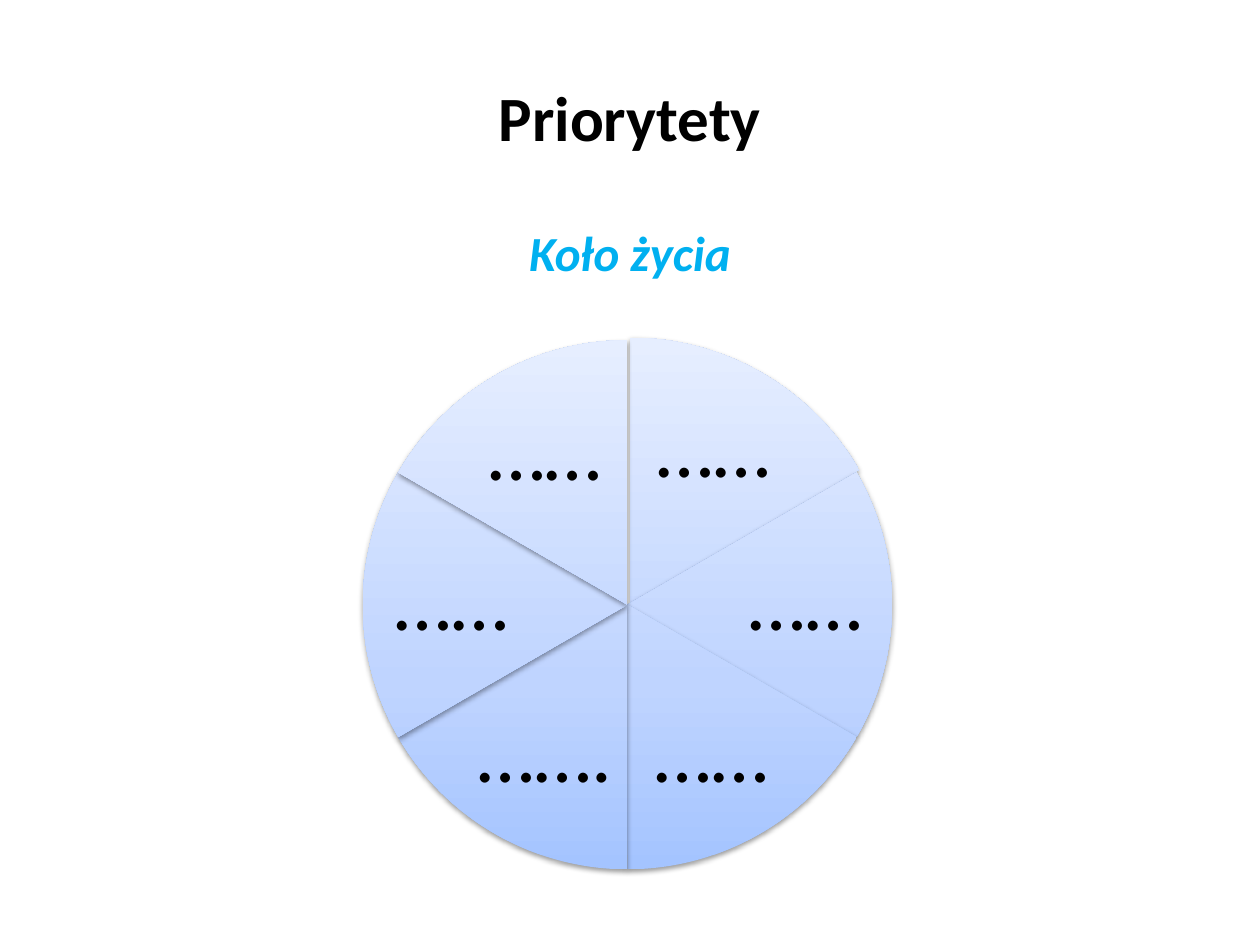
from copy import deepcopy
from dataclasses import dataclass

from pptx import Presentation
from pptx.dml.color import RGBColor
from pptx.enum.shapes import MSO_SHAPE
from pptx.enum.text import MSO_ANCHOR, PP_ALIGN
from pptx.oxml import parse_xml
from pptx.oxml.ns import nsdecls
from pptx.util import Inches, Pt

PIE = MSO_SHAPE.PIE
CENTER = PP_ALIGN.CENTER
TOP, MIDDLE = MSO_ANCHOR.TOP, MSO_ANCHOR.MIDDLE


@dataclass(frozen=True)
class Theme:
    font: str = "Calibri"
    text: str = "000000"
    accent: str = "00B0F0"
    gradient: tuple = ((0, "A4C4FF"), (0.35, "BFD4FF"), (1, "E6EEFF"))
    title_size: float = 36
    subtitle_size: float = 28
    label_size: float = 47


THEME = Theme()

WHEEL_SIZE = 4.2
SECTOR_ANGLE = 60
FIRST_ANGLE = 270  # twelve o'clock, going clockwise
WHEEL_AT = (2.88, 2.7)
FIRST_SECTOR_AT = (2.9, 2.68)

# Clockwise from the top right sector: text and box
LABELS = [
    ("……", (5.05, 3.13, 1.23, 0.9)),
    ("……", (5.76, 4.37, 1.27, 0.85)),
    ("……", (5.03, 5.55, 1.23, 0.9)),
    ("…….", (3.71, 5.55, 1.23, 0.9)),
    ("……", (2.95, 4.37, 1.27, 0.85)),
    ("……", (3.71, 3.15, 1.23, 0.9)),
]


def set_attributes(target, values):
    for name, value in values.items():
        setattr(target, name, value)


def add_text(s, text, box, size, color=THEME.text, anchor=MIDDLE,
             margin=None, paragraph=None, **font):
    tf = s.shapes.add_textbox(*map(Inches, box)).text_frame
    set_attributes(tf, {"word_wrap": True, "vertical_anchor": anchor})
    if margin is not None:
        sides = ("left", "top", "right", "bottom")
        set_attributes(tf, {f"margin_{side}": Inches(margin) for side in sides})
    p = tf.paragraphs[0]
    set_attributes(p, {"alignment": CENTER, **(paragraph or {})})
    r = p.add_run()
    r.text = text
    set_attributes(r.font, {"name": THEME.font, "size": Pt(size), **font})
    r.font.color.rgb = RGBColor.from_string(color)


def fill_gradient(sp):
    """Fill from the first theme colour at the bottom to the last at the top."""
    fill = sp.fill
    fill.gradient()
    fill.gradient_angle = 90
    stop_list = sp._element.spPr.gradFill.gsLst
    stop_list.append(deepcopy(stop_list[0]))
    for stop, (position, color) in zip(fill.gradient_stops, THEME.gradient):
        stop.position = position
        stop.color.rgb = RGBColor.from_string(color)


def add_soft_shadow(sp):
    sp._element.spPr.append(parse_xml(
        f'<a:effectLst {nsdecls("a")}>'
        '<a:outerShdw blurRad="40000" dist="20000" dir="5400000" rotWithShape="0">'
        '<a:srgbClr val="000000"><a:alpha val="38000"/></a:srgbClr>'
        '</a:outerShdw></a:effectLst>'))


def add_sector(s, at, start):
    sp = s.shapes.add_shape(PIE, *map(Inches, (*at, WHEEL_SIZE, WHEEL_SIZE)))
    for i, angle in enumerate((start, start + SECTOR_ANGLE)):
        sp.adjustments[i] = angle % 360 * 0.6
    fill_gradient(sp)
    sp.line.fill.background()
    add_soft_shadow(sp)


def add_wheel(s):
    spacing = {"line_spacing": 0.9, "space_after": Pt(0.35 * THEME.label_size)}
    for i, (text, box) in enumerate(LABELS):
        at = WHEEL_AT if i else FIRST_SECTOR_AT
        add_sector(s, at, FIRST_ANGLE + i * SECTOR_ANGLE)
        add_text(s, text, box, THEME.label_size, margin=0.07, paragraph=spacing)


def main():
    prs = Presentation()
    prs.slide_width, prs.slide_height = Inches(10), Inches(7.5)
    s = prs.slides.add_slide(prs.slide_layouts[6])
    add_text(s, "Priorytety", (0.5, 0.3, 9, 1.25), THEME.title_size, bold=True)
    add_text(s, "Koło życia", (0.31, 1.72, 9.38, 5), THEME.subtitle_size,
             THEME.accent, TOP, bold=True, italic=True,
             paragraph={"space_before": Pt(0.2 * THEME.subtitle_size)})
    add_wheel(s)
    prs.save("out.pptx")


if __name__ == "__main__":
    main()
